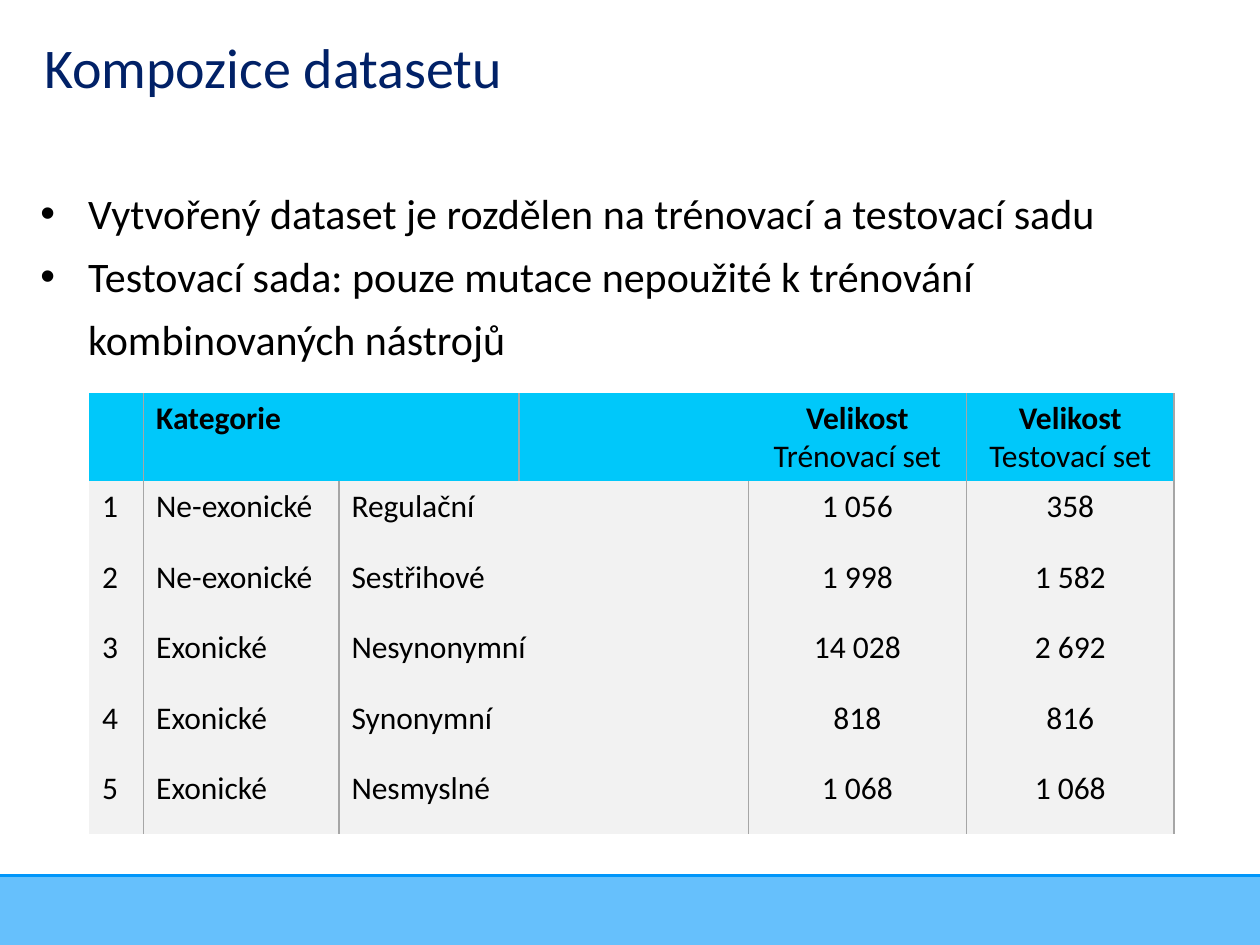
from lxml.etree import SubElement
from pptx import Presentation
from pptx.dml.color import RGBColor
from pptx.enum.shapes import MSO_CONNECTOR, MSO_SHAPE
from pptx.enum.text import MSO_ANCHOR, PP_ALIGN
from pptx.oxml.ns import qn
from pptx.util import Inches, Pt

WIDTH, HEIGHT = 10, 7.5
FONT = "Calibri"
PLAIN_TABLE = "{2D5ABB26-0587-4C30-8999-92F81FD0307C}"
BULLETS = [
    "Vytvořený dataset je rozdělen na trénovací a testovací sadu",
    "Testovací sada: pouze mutace nepoužité k trénování kombinovaných nástrojů",
]
COLUMNS = [0.43, 1.55, 1.43, 1.82, 1.73, 1.65]
HEADER = [
    (0, 0, []),
    (1, 2, ["Kategorie"]),
    (3, 3, []),
    (4, 4, ["Velikost", "Trénovací set"]),
    (5, 5, ["Velikost", "Testovací set"]),
]
BODY_SPANS = [(0, 0), (1, 1), (2, 3), (4, 4), (5, 5)]
BODY = [
    ("1", "Ne-exonické", "Regulační", "1 056", "358"),
    ("2", "Ne-exonické", "Sestřihové", "1 998", "1 582"),
    ("3", "Exonické", "Nesynonymní", "14 028", "2 692"),
    ("4", "Exonické", "Synonymní", "818", "816"),
    ("5", "Exonické", "Nesmyslné", "1 068", "1 068"),
]


def color(value):
    return RGBColor.from_string(value)


def add_run(paragraph, text, size, tint="000000", bold=False):
    run = paragraph.add_run()
    run.text = text
    run.font.name = FONT
    run.font.size = Pt(size)
    run.font.bold = bold
    run.font.color.rgb = color(tint)


def next_paragraph(frame, index):
    return frame.add_paragraph() if index else frame.paragraphs[0]


def add_text_frame(slide, box, anchor):
    frame = slide.shapes.add_textbox(*map(Inches, box)).text_frame
    frame.word_wrap = True
    frame.vertical_anchor = anchor
    frame.margin_left = frame.margin_right = 0
    frame.margin_top = frame.margin_bottom = 0
    return frame


def add_footer(slide, box):
    left, top, width, height = map(Inches, box)
    band = slide.shapes.add_shape(MSO_SHAPE.RECTANGLE, left, top, width, height)
    band.shadow.inherit = False
    band.line.fill.background()
    band.fill.solid()
    band.fill.fore_color.rgb = color("0096FA")
    tint = band.fill._xPr.find(qn("a:solidFill"))[0]
    SubElement(tint, qn("a:alpha"), val="60000")
    rule = slide.shapes.add_connector(MSO_CONNECTOR.STRAIGHT, left, top, left + width, top)
    rule.line.color.rgb = color("0096FA")
    rule.line.width = Pt(1.5)
    SubElement(rule._element.spPr, qn("a:effectLst"))


def add_title(slide, box):
    frame = add_text_frame(slide, box, MSO_ANCHOR.BOTTOM)
    add_run(frame.paragraphs[0], "Kompozice datasetu", 32, "012167")


def add_bullets(slide, box):
    frame = add_text_frame(slide, box, MSO_ANCHOR.TOP)
    for index, text in enumerate(BULLETS):
        paragraph = next_paragraph(frame, index)
        paragraph.line_spacing = 1.25
        properties = paragraph._p.get_or_add_pPr()
        properties.set("marL", str(Inches(0.39)))
        properties.set("indent", str(Inches(-0.38)))
        SubElement(properties, qn("a:buFont"), typeface="Arial")
        SubElement(properties, qn("a:buChar"), char="•")
        add_run(paragraph, text, 24)


def add_border(cell, side):
    line = SubElement(cell._tc.get_or_add_tcPr(), qn(f"a:ln{side}"), w=str(Pt(1)))
    SubElement(SubElement(line, qn("a:solidFill")), qn("a:srgbClr"), val="A6A6A6")


def fill_row(table, row, cells, fill, dividers, header=False):
    for first, last, lines in cells:
        cell = table.cell(row, first)
        if last > first:
            cell.merge(table.cell(row, last))
        if first in dividers:
            add_border(cell, "L")
        if last + 1 in dividers:
            add_border(cell, "R")
        cell.fill.solid()
        cell.fill.fore_color.rgb = color(fill)
        for index, text in enumerate(lines):
            paragraph = next_paragraph(cell.text_frame, index)
            paragraph.alignment = PP_ALIGN.CENTER if first >= 4 else PP_ALIGN.LEFT
            add_run(paragraph, text, 18, bold=header and index == 0)


def add_dataset_table(slide, box):
    frame = slide.shapes.add_table(len(BODY) + 1, len(COLUMNS), *map(Inches, box))
    table = frame.table
    table.first_row = table.horz_banding = False
    table._tbl.tblPr.find(qn("a:tableStyleId")).text = PLAIN_TABLE
    for column, width in zip(table.columns, COLUMNS):
        column.width = Inches(width)
    for index, row in enumerate(table.rows):
        row.height = Inches(0.56 if index else 0.57)
    fill_row(table, 0, HEADER, "00C8FA", {1, 5}, header=True)
    for row, values in enumerate(BODY, 1):
        cells = [(*span, [value]) for span, value in zip(BODY_SPANS, values)]
        fill_row(table, row, cells, "F2F2F2", {1, 4, 5})


def main():
    presentation = Presentation()
    presentation.slide_width = Inches(WIDTH)
    presentation.slide_height = Inches(HEIGHT)
    slide = presentation.slides.add_slide(presentation.slide_layouts[6])
    add_footer(slide, (0, 6.95, WIDTH, HEIGHT - 6.95))
    add_title(slide, (0.35, 0.2, 8.3, 0.59))
    add_dataset_table(slide, (0.71, 3.12, sum(COLUMNS), 3.37))
    add_bullets(slide, (0.31, 1.39, 9.45, 1.57))
    presentation.save("out.pptx")


if __name__ == "__main__":
    main()
